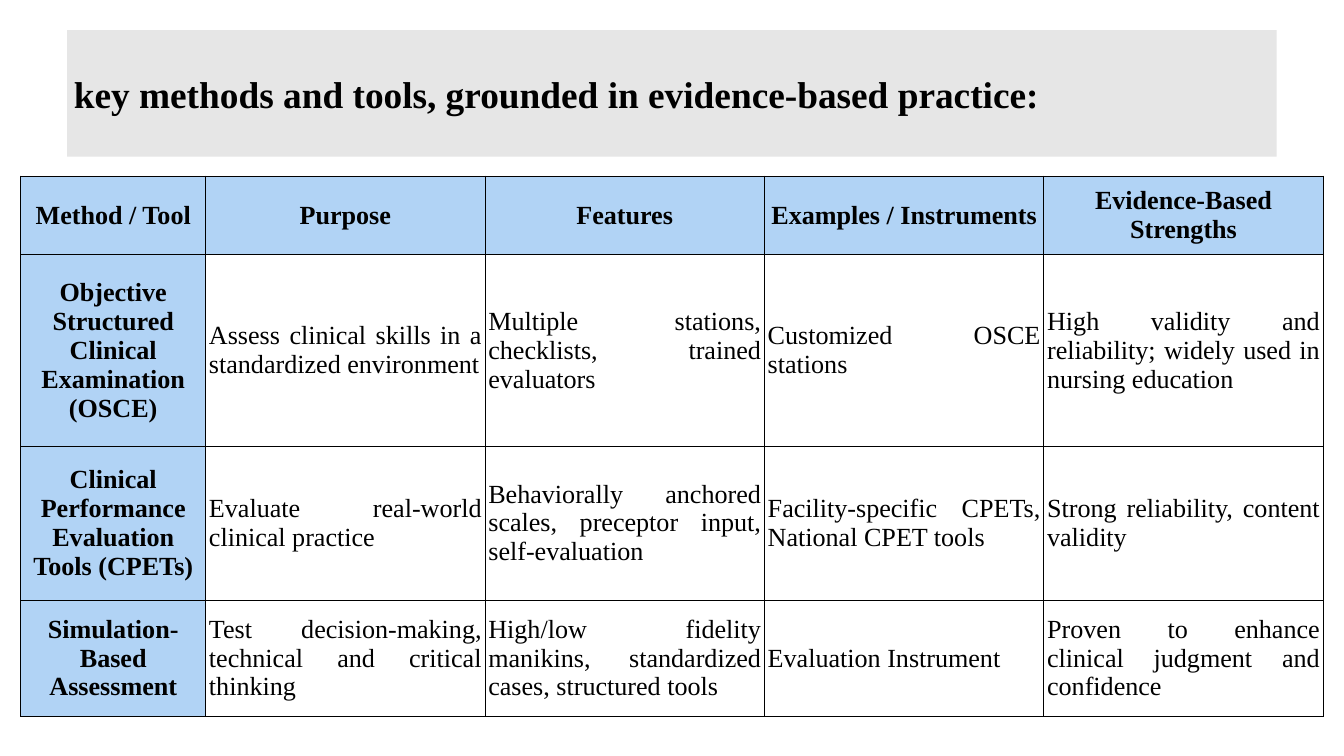
from lxml import etree
from pptx import Presentation
from pptx.dml.color import RGBColor
from pptx.enum.shapes import MSO_SHAPE
from pptx.enum.text import MSO_ANCHOR, PP_ALIGN
from pptx.oxml.ns import qn
from pptx.util import Inches, Pt

FONT = "Times New Roman"
BLACK, BANNER_GREY, HEADING_BLUE = "000000", "E6E6E6", "B1D3F5"
TITLE = "key methods and tools, grounded in evidence-based practice:"
METHODS = [
    ["Method / Tool", "Purpose", "Features", "Examples / Instruments",
     "Evidence-Based Strengths"],
    ["Objective Structured Clinical Examination (OSCE)",
     "Assess clinical skills in a standardized environment",
     "Multiple stations, checklists, trained evaluators",
     "Customized OSCE stations",
     "High validity and reliability; widely used in nursing education"],
    ["Clinical Performance Evaluation Tools (CPETs)",
     "Evaluate real-world clinical practice",
     "Behaviorally anchored scales, preceptor input, self-evaluation",
     "Facility-specific CPETs, National CPET tools",
     "Strong reliability, content validity"],
    ["Simulation-Based Assessment",
     "Test decision-making, technical and critical thinking",
     "High/low fidelity manikins, standardized cases, structured tools",
     "Evaluation Instrument",
     "Proven to enhance clinical judgment and confidence"],
]
ROW_HEIGHTS = [1.17, 2.85, 2.29, 1.73]
METHOD_WIDTH = 2.75


def paint(target, color):
    target.fill.solid()
    target.fill.fore_color.rgb = RGBColor.from_string(color)


def write(frame, text, size, align, bold):
    frame.text = text
    frame.word_wrap = True
    paragraph = frame.paragraphs[0]
    paragraph.alignment = align
    font = paragraph.runs[0].font
    font.name, font.size, font.bold = FONT, Pt(size), bold
    font.color.rgb = RGBColor.from_string(BLACK)


def outline_cell(cell):
    """Draw 1 pt borders; they must come before the fill in the cell's XML."""
    properties = cell._tc.get_or_add_tcPr()
    for side in ("a:lnL", "a:lnR", "a:lnT", "a:lnB"):
        line = etree.SubElement(properties, qn(side), w=str(Pt(1)))
        fill = etree.SubElement(line, qn("a:solidFill"))
        etree.SubElement(fill, qn("a:srgbClr"), val=BLACK)


def add_banner(slide, left, top, width, height):
    banner = slide.shapes.add_shape(
        MSO_SHAPE.RECTANGLE, *map(Inches, (left, top, width, height)))
    banner.shadow.inherit = False
    banner.line.fill.background()
    paint(banner, BANNER_GREY)
    banner.text_frame.vertical_anchor = MSO_ANCHOR.MIDDLE
    write(banner.text_frame, TITLE, 40, PP_ALIGN.LEFT, True)


def add_methods_table(slide, left, top, width, height):
    rows, columns = len(METHODS), len(METHODS[0])
    table = slide.shapes.add_table(
        rows, columns, *map(Inches, (left, top, width, height))).table
    table.horz_banding = False
    detail_width = (width - METHOD_WIDTH) / (columns - 1)
    for index, column in enumerate(table.columns):
        column.width = Inches(detail_width if index else METHOD_WIDTH)
    for row, share in zip(table.rows, ROW_HEIGHTS):
        row.height = Inches(height * share / sum(ROW_HEIGHTS))

    for r, texts in enumerate(METHODS):
        for c, text in enumerate(texts):
            cell = table.cell(r, c)
            heading = r == 0 or c == 0
            outline_cell(cell)
            if heading:
                paint(cell, HEADING_BLUE)
            else:
                cell.fill.background()
            cell.margin_left = cell.margin_right = Inches(0.05)
            cell.margin_top = cell.margin_bottom = Inches(0.02)
            cell.vertical_anchor = MSO_ANCHOR.MIDDLE
            align = PP_ALIGN.CENTER if heading else PP_ALIGN.JUSTIFY
            write(cell.text_frame, text, 28, align, heading)


def main():
    deck = Presentation()
    deck.slide_width, deck.slide_height = Inches(20), Inches(11.25)
    slide = deck.slides.add_slide(deck.slide_layouts[6])
    add_methods_table(slide, 0.31, 2.62, 19.38, 8.04)
    add_banner(slide, 1, 0.45, 18, 1.88)
    deck.save("out.pptx")


if __name__ == "__main__":
    main()
